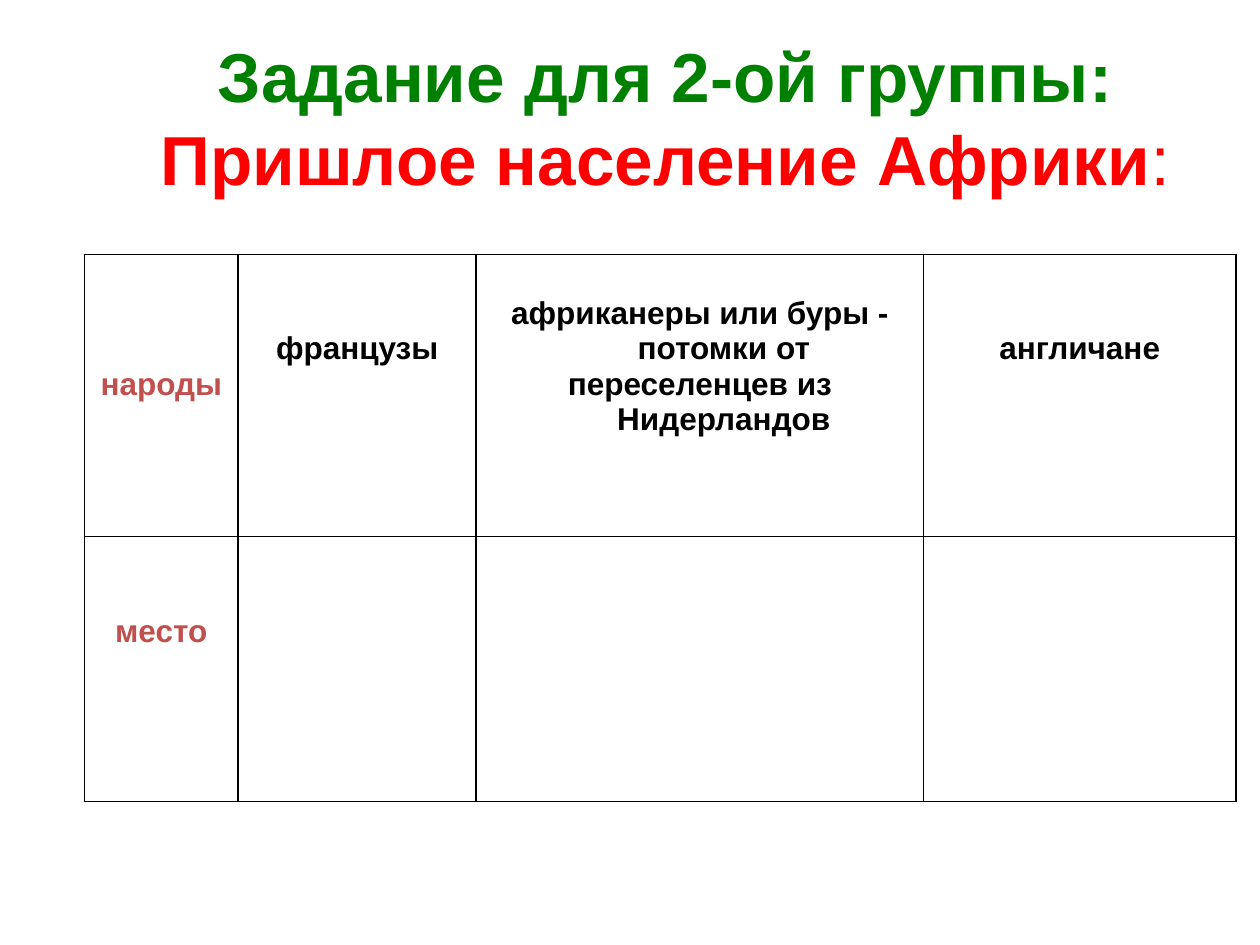
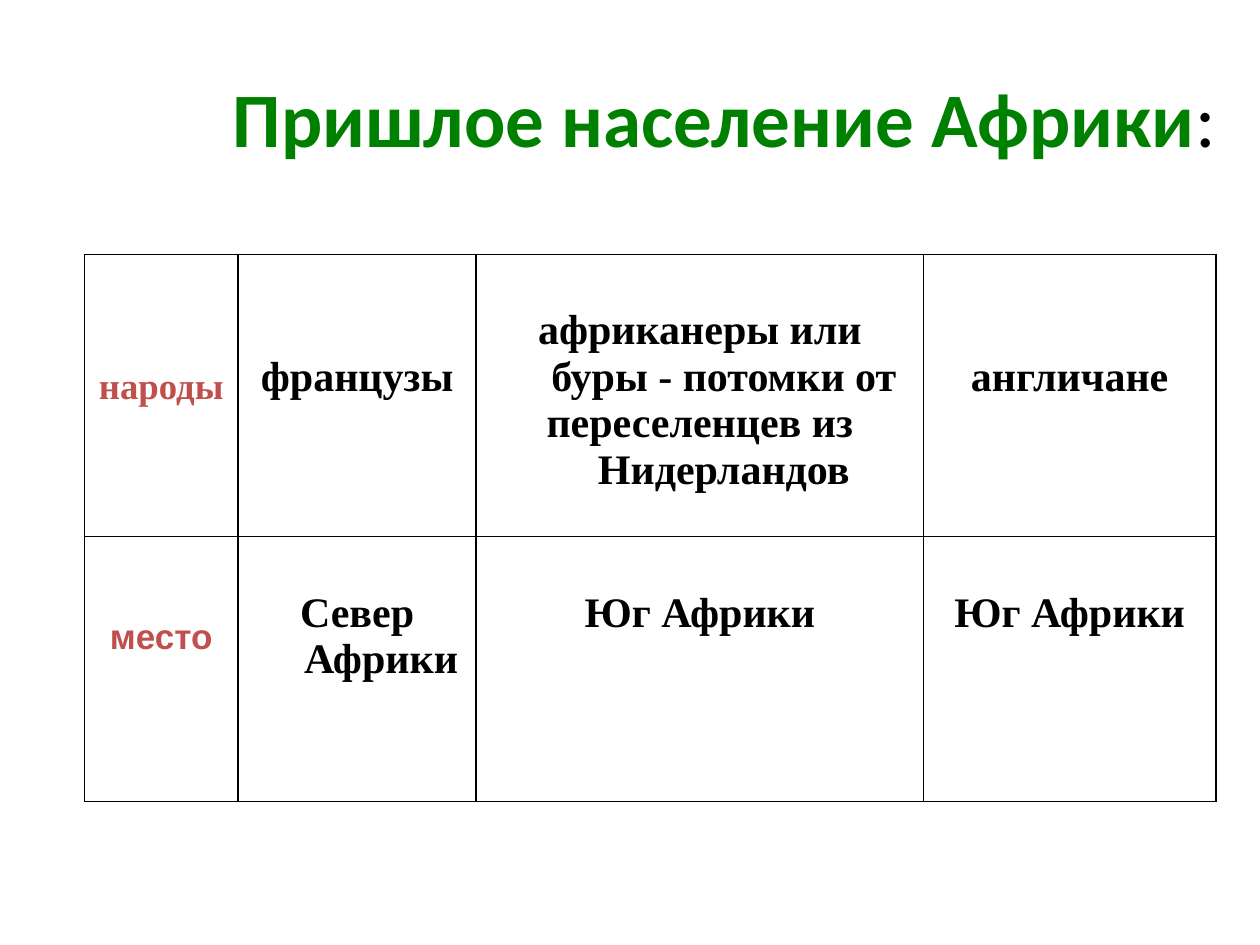
import dataclasses
import pptx
import pptx.util
import pptx.dml.color
import pptx.enum.text
import pptx.oxml
import pptx.oxml.ns

Inches = pptx.util.Inches
Pt = pptx.util.Pt


@dataclasses.dataclass(frozen=True)
class Theme:
    green: str = "008000"
    red: str = "FF0000"
    rose: str = "C0504D"
    black: str = "000000"
    sans: str = "Arial"
    head: str = "Calibri"
    serif: str = "Times New Roman"
    small: float = 18
    mid: float = 20
    label: float = 21
    large: float = 24
    tight: float = 39.6
    big: float = 44
    hang: float = 0.38
    rule: float = 1


LOOK = Theme()
PEOPLES = [
    ["французы"],
    ["африканеры или буры - потомки от", "переселенцев из Нидерландов"],
    ["англичане"],
]
PLACES = [["Север Африки"], ["Юг Африки"], ["Юг Африки"]]


def put(par, text, font=LOOK.sans, size=LOOK.small, color=LOOK.black, bold=True):
    run = par.add_run()
    run.text = text
    run.font.name = font
    run.font.size = Pt(size)
    run.font.bold = bold
    run.font.color.rgb = pptx.dml.color.RGBColor.from_string(color)


def place_title(slide, left, width):
    title = slide.shapes.title
    title.left, title.top = Inches(left), Inches(0.3)
    title.width, title.height = Inches(width), Inches(1.25)
    frame = title.text_frame
    frame.word_wrap = True
    frame.auto_size = pptx.enum.text.MSO_AUTO_SIZE.NONE
    frame.vertical_anchor = pptx.enum.text.MSO_ANCHOR.MIDDLE
    par = frame.paragraphs[0]
    par.alignment = pptx.enum.text.PP_ALIGN.CENTER
    return par


def rule_cell(cell):
    props = cell._tc.get_or_add_tcPr()
    for side in ("lnL", "lnR", "lnT", "lnB"):
        props.append(pptx.oxml.parse_xml(
            f'<a:{side} {pptx.oxml.ns.nsdecls("a")} w="{Pt(LOOK.rule)}">'
            f'<a:solidFill><a:srgbClr val="{LOOK.black}"/></a:solidFill></a:{side}>'))
    cell.fill.background()


def fill_cell(cell, lines, drop, **form):
    cell.margin_top = Inches(drop)
    frame = cell.text_frame
    for num, line in enumerate(lines):
        par = frame.add_paragraph() if num else frame.paragraphs[0]
        par.alignment = pptx.enum.text.PP_ALIGN.CENTER
        props = par._p.get_or_add_pPr()
        props.set("marL", str(Inches(LOOK.hang)))
        props.set("indent", str(-Inches(LOOK.hang)))
        put(par, line, **form)


def add_grid(slide, last):
    cols, rows = [1.22, 1.89, 3.55, last], [2.24, 2.1]
    frame = slide.shapes.add_table(
        len(rows), len(cols), Inches(0.67), Inches(2.02),
        Inches(sum(cols)), Inches(sum(rows)))
    grid = frame.table
    grid.first_row = grid.horz_banding = False
    for col, width in zip(grid.columns, cols):
        col.width = Inches(width)
    for row, height in zip(grid.rows, rows):
        row.height = Inches(height)
    for cell in grid.iter_cells():
        rule_cell(cell)
    return grid


def fill_row(grid, row, texts, drops, **form):
    for col, (lines, drop) in enumerate(zip(texts, drops), 1):
        fill_cell(grid.cell(row, col), lines, drop, **form)


def build_task(slide):
    par = place_title(slide, 0.75, 9.06)
    put(par, "Задание для 2-ой группы:", size=LOOK.tight, color=LOOK.green)
    par.add_line_break()
    put(par, "Пришлое население Африки", size=LOOK.tight, color=LOOK.red)
    put(par, ":", size=LOOK.tight, color=LOOK.red, bold=False)
    grid = add_grid(slide, 2.48)
    fill_cell(grid.cell(0, 0), ["народы"], 0.89, color=LOOK.rose)
    fill_cell(grid.cell(1, 0), ["место"], 0.61, color=LOOK.rose)
    fill_row(grid, 0, PEOPLES, [0.61, 0.33, 0.61])


def build_key(slide):
    par = place_title(slide, 1.5, 8.5)
    put(par, "Пришлое население Африки", font=LOOK.head, size=LOOK.big,
        color=LOOK.green)
    put(par, ":", font=LOOK.head, size=LOOK.big, bold=False)
    grid = add_grid(slide, 2.32)
    fill_cell(grid.cell(0, 0), ["народы"], 0.89, font=LOOK.serif,
              size=LOOK.label, color=LOOK.rose)
    fill_cell(grid.cell(1, 0), ["место"], 0.64, size=LOOK.mid, color=LOOK.rose)
    form = {"font": LOOK.serif, "size": LOOK.large}
    fill_row(grid, 0, PEOPLES, [0.79, 0.42, 0.79], **form)
    fill_row(grid, 1, PLACES, [0.42] * 3, **form)


def main():
    deck = pptx.Presentation()
    deck.slide_width, deck.slide_height = Inches(10), Inches(7.5)
    for build in (build_task, build_key):
        build(deck.slides.add_slide(deck.slide_layouts[5]))
    deck.save("out.pptx")


if __name__ == "__main__":
    main()
